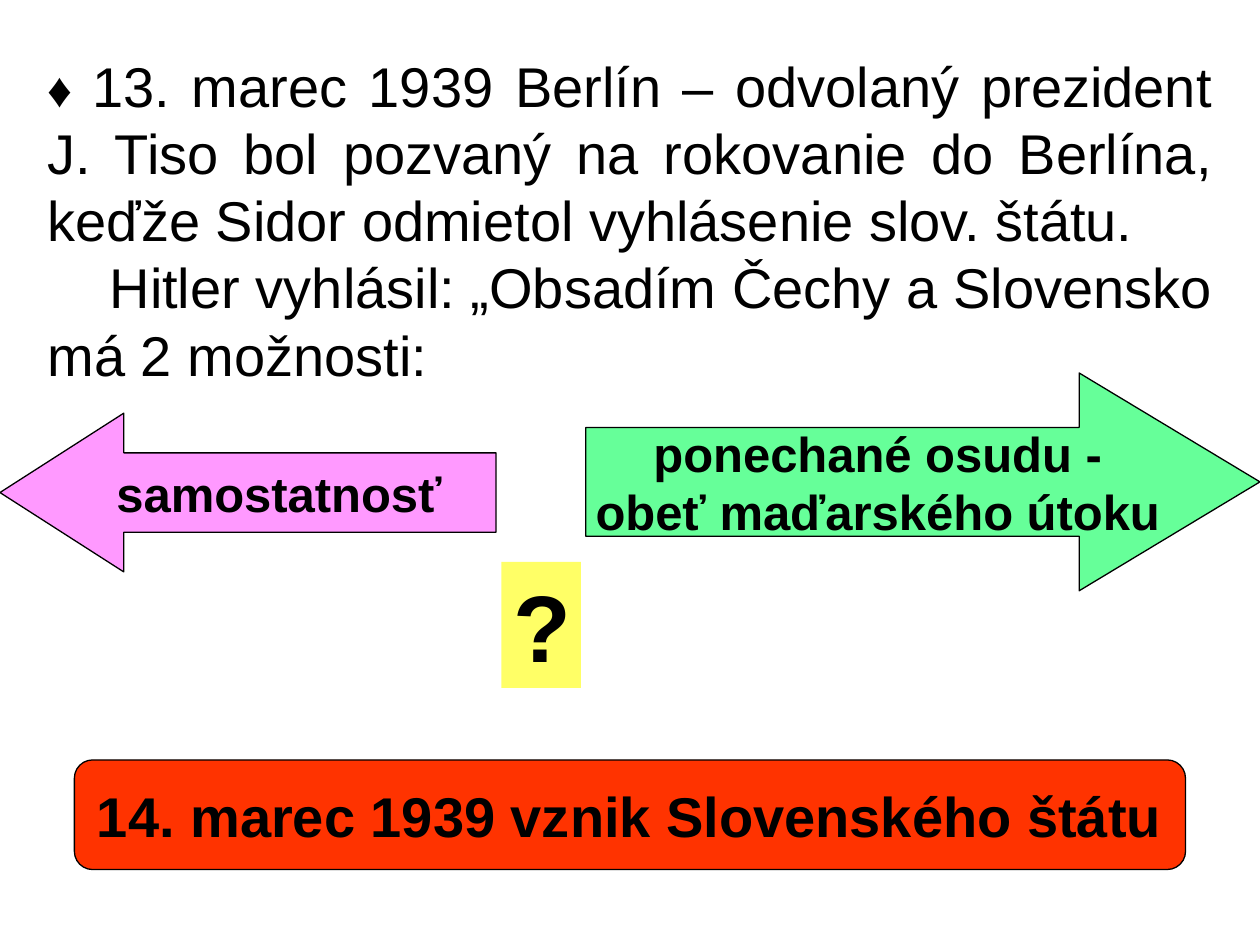
from pptx import Presentation
from pptx.dml.color import RGBColor
from pptx.enum.shapes import MSO_SHAPE as Shape
from pptx.enum.text import MSO_ANCHOR as Anchor, MSO_AUTO_SIZE as AutoSize, PP_ALIGN as Align
from pptx.util import Cm, Pt

BLACK = RGBColor(0x00, 0x00, 0x00)
PINK = RGBColor(0xFF, 0x99, 0xFF)
GREEN = RGBColor(0x66, 0xFF, 0x99)
RED = RGBColor(0xFF, 0x33, 0x00)
YELLOW = RGBColor(0xFF, 0xFF, 0x66)

STORY = [
    (0, [("♦ ", 28),
         ("13. marec 1939 Berlín – odvolaný prezident J. Tiso bol pozvaný na rokovanie "
          "do Berlína, keďže Sidor odmietol vyhlásenie slov. štátu.", 32)]),
    (1.25, [("Hitler vyhlásil: „Obsadím Čechy a Slovensko má 2 možnosti:", 32)]),
]
STORY_PLACE = (0.71, 0.91, 24, 7.09)

OUTLINED = [
    (Shape.LEFT_ARROW, (0, 8.33, 10, 3.2), (0.5, 0.78), PINK, 28, ["samostatnosť"]),
    (Shape.RIGHT_ARROW, (11.81, 7.52, 13.59, 4.39), (0.5, 0.83), GREEN, 28,
     ["ponechané osudu -", "obeť maďarského útoku"]),
    (Shape.FLOWCHART_ALTERNATE_PROCESS, (1.5, 15.32, 22.4, 2.21), (), RED, 32,
     ["14. marec 1939 vznik Slovenského štátu"]),
]
QUESTION_PLACE = (10.11, 11.33, 1.6, 2.54)


def place(values):
    return [Cm(value) for value in values]


def style(font, size, bold=False):
    font.name = "Arial"
    font.size = Pt(size)
    font.bold = bold
    font.color.rgb = BLACK


def add_story(page):
    frame = page.shapes.add_textbox(*place(STORY_PLACE)).text_frame
    frame.word_wrap = True
    frame.auto_size = AutoSize.SHAPE_TO_FIT_TEXT
    for number, (indent, spans) in enumerate(STORY):
        para = frame.add_paragraph() if number else frame.paragraphs[0]
        para.alignment = Align.JUSTIFY
        para._p.get_or_add_pPr().set("indent", str(Cm(indent)))
        for text, size in spans:
            span = para.add_run()
            span.text = text
            style(span.font, size)


def add_block(page, kind, position, fill, size, lines, align):
    box = page.shapes.add_shape(kind, *place(position))
    box.shadow.inherit = False
    box.fill.solid()
    box.fill.fore_color.rgb = fill
    frame = box.text_frame
    frame.text = "\n".join(lines)
    for para in frame.paragraphs:
        para.alignment = align
        style(para.font, size, bold=True)
    return box


deck = Presentation()
deck.slide_width, deck.slide_height = Cm(25.4), Cm(19.05)
page = deck.slides.add_slide(deck.slide_layouts[6])

add_story(page)

for kind, position, adjustments, fill, size, lines in OUTLINED:
    box = add_block(page, kind, position, fill, size, lines, Align.CENTER)
    box.line.color.rgb = BLACK
    box.line.width = Pt(0.75)
    box.text_frame.word_wrap = False
    box.text_frame.vertical_anchor = Anchor.MIDDLE
    for number, value in enumerate(adjustments):
        box.adjustments[number] = value

question = add_block(page, Shape.RECTANGLE, QUESTION_PLACE, YELLOW, 54, ["?"], Align.LEFT)
question.line.fill.background()
question.text_frame.word_wrap = True
question.text_frame.vertical_anchor = Anchor.TOP
question.text_frame.auto_size = AutoSize.SHAPE_TO_FIT_TEXT

deck.save("out.pptx")
